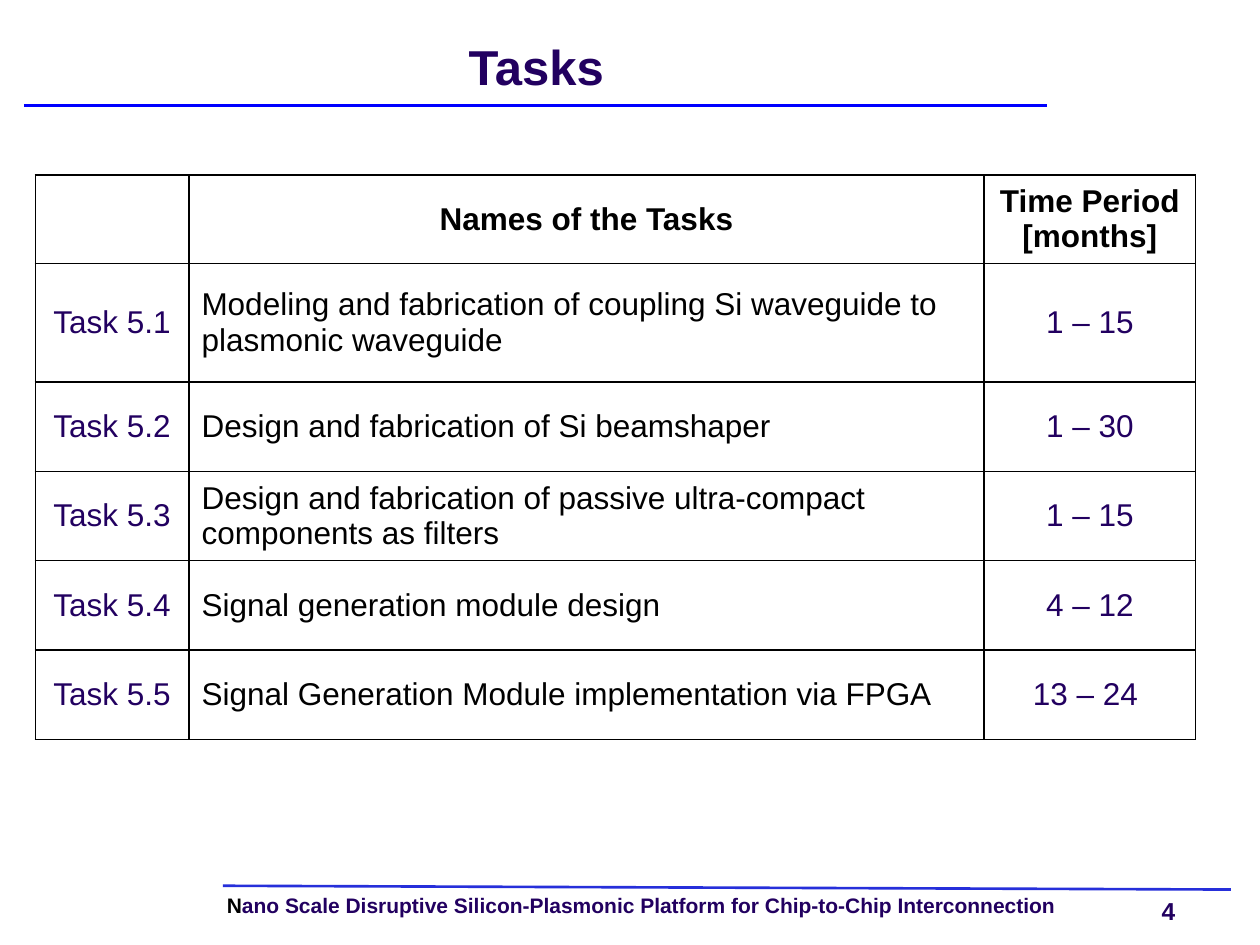
from dataclasses import dataclass

from lxml import etree
from pptx import Presentation
from pptx.dml.color import RGBColor
from pptx.enum.shapes import MSO_CONNECTOR
from pptx.enum.text import MSO_ANCHOR, PP_ALIGN
from pptx.oxml.ns import qn
from pptx.util import Inches, Pt

LEFT, CENTER = PP_ALIGN.LEFT, PP_ALIGN.CENTER
TOP, MIDDLE = MSO_ANCHOR.TOP, MSO_ANCHOR.MIDDLE
STRAIGHT = MSO_CONNECTOR.STRAIGHT


@dataclass(frozen=True)
class Theme:
    font: str = "Arial"
    ink: str = "220060"
    black: str = "000000"
    title_rule: str = "0000FF"
    footer_rule: str = "262FDA"
    title: int = 28
    table: int = 18
    number: int = 14
    footer: int = 12
    rule: float = 1.5
    border: float = 1


class SlideBuilder:
    def __init__(self, slide, theme):
        self.s = slide
        self.theme = theme

    def add_runs(self, p, runs, size, bold=False, **layout):
        for name, value in layout.items():
            setattr(p, name, value)
        for text, color in runs:
            r = p.add_run()
            r.text = text
            style = {"name": self.theme.font, "size": Pt(size), "bold": bold}
            for name, value in style.items():
                setattr(r.font, name, value)
            r.font.color.rgb = RGBColor.from_string(color)

    def text(self, box, runs, size, anchor=TOP, wrap=True, **layout):
        tf = self.s.shapes.add_textbox(*map(Inches, box)).text_frame
        frame = {"margin_left": 0, "margin_top": 0, "margin_right": 0,
                 "margin_bottom": 0, "vertical_anchor": anchor, "word_wrap": wrap}
        for name, value in frame.items():
            setattr(tf, name, value)
        self.add_runs(tf.paragraphs[0], runs, size, bold=True, **layout)

    def rule(self, ends, color):
        line = self.s.shapes.add_connector(STRAIGHT, *map(Inches, ends))
        line.line.color.rgb = RGBColor.from_string(color)
        line.line.width = Pt(self.theme.rule)
        etree.SubElement(line._element.spPr, qn("a:effectLst"))

    def borders(self, cell):
        tc_pr = cell._tc.get_or_add_tcPr()
        for side in ("lnL", "lnR", "lnT", "lnB"):
            ln = etree.SubElement(tc_pr, qn(f"a:{side}"), w=str(Pt(self.theme.border)))
            fill = etree.SubElement(ln, qn("a:solidFill"))
            etree.SubElement(fill, qn("a:srgbClr"), val=self.theme.black)

    def table(self, left, top, widths, heights, rows):
        t = self.theme
        box = (left, top, sum(widths), sum(heights))
        table = self.s.shapes.add_table(len(rows), len(widths), *map(Inches, box)).table
        table.first_row = table.horz_banding = False
        for column, width in zip(table.columns, widths):
            column.width = Inches(width)
        for row, height in zip(table.rows, heights):
            row.height = Inches(height)
        for i, row in enumerate(rows):
            for j, text in enumerate(row):
                cell = table.cell(i, j)
                self.borders(cell)
                cell.fill.background()
                cell.vertical_anchor = MIDDLE
                header, name = i == 0, j == 1
                color = t.black if header or name else t.ink
                align = LEFT if name and not header else CENTER
                if text:
                    self.add_runs(cell.text_frame.paragraphs[0], [(text, color)],
                                  t.table, bold=header, alignment=align)


TASKS = [
    ("", "Names of the Tasks", "Time Period [months]"),
    ("Task 5.1", "Modeling and fabrication of coupling Si waveguide to plasmonic waveguide", "1 – 15"),
    ("Task 5.2", "Design and fabrication of Si beamshaper", "1 – 30"),
    ("Task 5.3", "Design and fabrication of passive ultra-compact components as filters", "1 – 15"),
    ("Task 5.4", "Signal generation module design", "4 – 12"),
    ("Task 5.5", "Signal Generation Module implementation via FPGA", "13 – 24 "),
]


def main():
    prs = Presentation()
    prs.slide_width, prs.slide_height = Inches(10), Inches(7.5)
    t = Theme()
    b = SlideBuilder(prs.slides.add_slide(prs.slide_layouts[6]), t)

    b.text((0.2, 0.2, 8.11, 0.67), [("Tasks", t.ink)], t.title,
           anchor=MIDDLE, alignment=CENTER, line_spacing=Pt(32))
    b.rule((0.19, 0.84, 8.31, 0.84), t.title_rule)

    b.table(0.28, 1.39, (1.22, 6.31, 1.68), (0.66, 0.94) + (0.71,) * 4, TASKS)

    b.rule((1.77, 7.03, 9.77, 7.06), t.footer_rule)
    b.text((1.8, 7.11, 7.14, 0.18),
           [("N", t.black),
            ("ano Scale Disruptive Silicon-Plasmonic Platform for Chip-to-Chip Interconnection", t.ink)],
           t.footer, line_spacing=0.9)
    b.text((9.22, 7.11, 0.4, 0.23), [("4", t.ink)], t.number, wrap=False, alignment=LEFT)

    prs.save("out.pptx")


if __name__ == "__main__":
    main()
